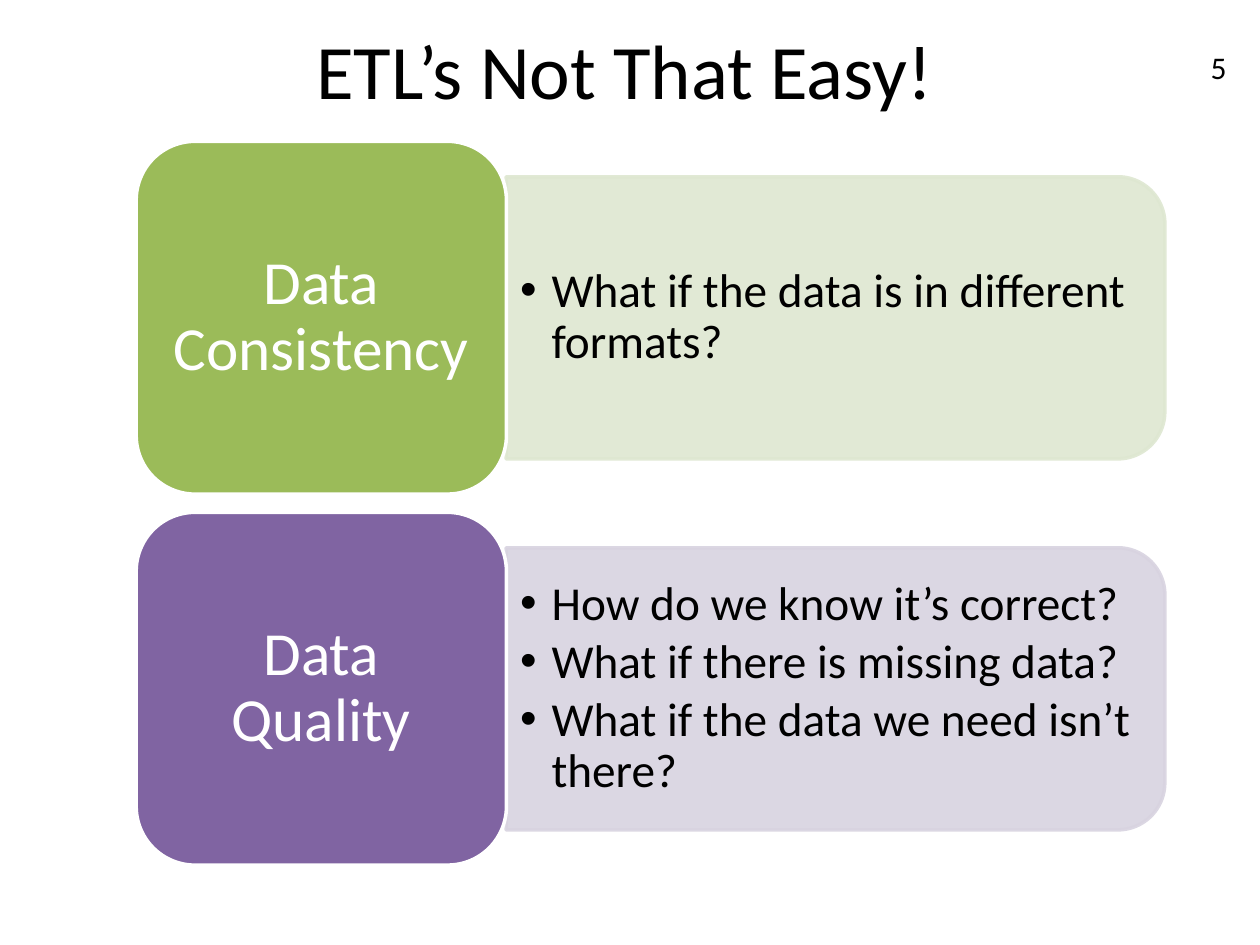
from lxml import etree
from pptx import Presentation
from pptx.dml.color import RGBColor
from pptx.enum.shapes import MSO_SHAPE
from pptx.enum.text import MSO_ANCHOR, MSO_AUTO_SIZE, PP_ALIGN
from pptx.oxml.ns import qn
from pptx.util import Pt

ROUND, ROUND_TOP = MSO_SHAPE.ROUNDED_RECTANGLE, MSO_SHAPE.ROUND_2_SAME_RECTANGLE
LEFT, CENTER, RIGHT = PP_ALIGN.LEFT, PP_ALIGN.CENTER, PP_ALIGN.RIGHT
MIDDLE = MSO_ANCHOR.MIDDLE
NO_FIT = MSO_AUTO_SIZE.NONE

COLORS = {
    "black": "000000", "white": "FFFFFF",
    "green": "9BBB59", "pale green": "DEE7D1",
    "purple": "8064A2", "pale purple": "D8D3E0",
}
TOPICS = [
    ("Data Consistency", "green", ["What if the data is in different formats?"]),
    ("Data Quality", "purple", [
        "How do we know it’s correct?",
        "What if there is missing data?",
        "What if the data we need isn’t there?",
    ]),
]


def write(tf, text, size=18, color="black", align=LEFT, spacing=1.0, after=0,
          inset=(7.2, 3.6), bullet=False):
    """Fill a text frame with one paragraph per line of text."""
    tf.word_wrap = True
    tf.auto_size = NO_FIT
    tf.vertical_anchor = MIDDLE
    tf.margin_left = tf.margin_right = Pt(inset[0])
    tf.margin_top = tf.margin_bottom = Pt(inset[1])
    for i, line in enumerate(text.split("\n")):
        p = tf.add_paragraph() if i else tf.paragraphs[0]
        if bullet:
            pPr = p._p.get_or_add_pPr()
            pPr.set("marL", str(Pt(18)))
            pPr.set("indent", str(-Pt(18)))
            etree.SubElement(pPr, qn("a:buChar"), char="•")
        p.alignment = align
        p.line_spacing = spacing
        p.space_before = Pt(0)
        p.space_after = Pt(after)
        r = p.add_run()
        r.text = line
        r.font.name = "Calibri"
        r.font.size = Pt(size)
        r.font.color.rgb = RGBColor.from_string(COLORS[color])


class Deck:
    """Holds the style and the current slide."""

    def __init__(self, prs, layout):
        """Add a slide with the given layout."""
        self.s = prs.slides.add_slide(prs.slide_layouts[layout])

    def placeholder(self, idx, box, text, **fmt):
        """Move a placeholder to the front and write in it."""
        sp = self.s.placeholders[idx]
        sp.left, sp.top, sp.width, sp.height = map(Pt, box)
        sp._element.getparent().append(sp._element)
        write(sp.text_frame, text, **fmt)

    def label(self, box, text, **fmt):
        """Add a text box."""
        write(self.s.shapes.add_textbox(*map(Pt, box)).text_frame, text, **fmt)

    def shape(self, kind, box, fill, line, rotation=0, opacity=100):
        """Add a filled and outlined preset shape."""
        sp = self.s.shapes.add_shape(kind, *map(Pt, box))
        sp.shadow.inherit = False
        sp.rotation = rotation
        sp.line.width = Pt(2)
        for part, color in ((sp.fill, fill), (sp.line.fill, line)):
            part.solid()
            part.fore_color.rgb = RGBColor.from_string(COLORS[color])
        if opacity < 100:
            for clr in sp._element.spPr.iter(qn("a:srgbClr")):
                etree.SubElement(clr, qn("a:alpha"), val=str(opacity * 1000))

    def topic(self, idx, top, name, color, points):
        """Add a coloured heading tile beside its panel of bullet points."""
        mid = top + 100.8
        pale = "pale " + color
        self.shape(ROUND_TOP, (396.8, mid - 188.2, 161.2, 376.4), pale, pale,
                   rotation=90, opacity=90)
        self.placeholder(idx, (289.2, mid - 72.8, 368.6, 145.6), "\n".join(points),
                         size=27, spacing=0.9, after=4, inset=(8, 4), bullet=True)
        self.shape(ROUND, (77.8, top, 211.6, 201.6), color, "white")
        self.label((87.6, mid - 91.1, 192, 182.2), name, size=35, color="white",
                   align=CENTER, spacing=0.9, after=12, inset=(10.5, 5.2))


def main():
    """Build and save the slide."""
    prs = Presentation()
    prs.slide_width, prs.slide_height = Pt(720), Pt(540)
    deck = Deck(prs, 3)
    deck.label((588, 24, 120, 28.8), "5", align=RIGHT)
    deck.placeholder(0, (0, 0, 714, 78), "ETL’s Not That Easy!", size=44, align=CENTER)
    for i, (name, color, points) in enumerate(TOPICS):
        deck.topic(i + 1, 80.8 + 212 * i, name, color, points)
    prs.save("out.pptx")


if __name__ == "__main__":
    main()
